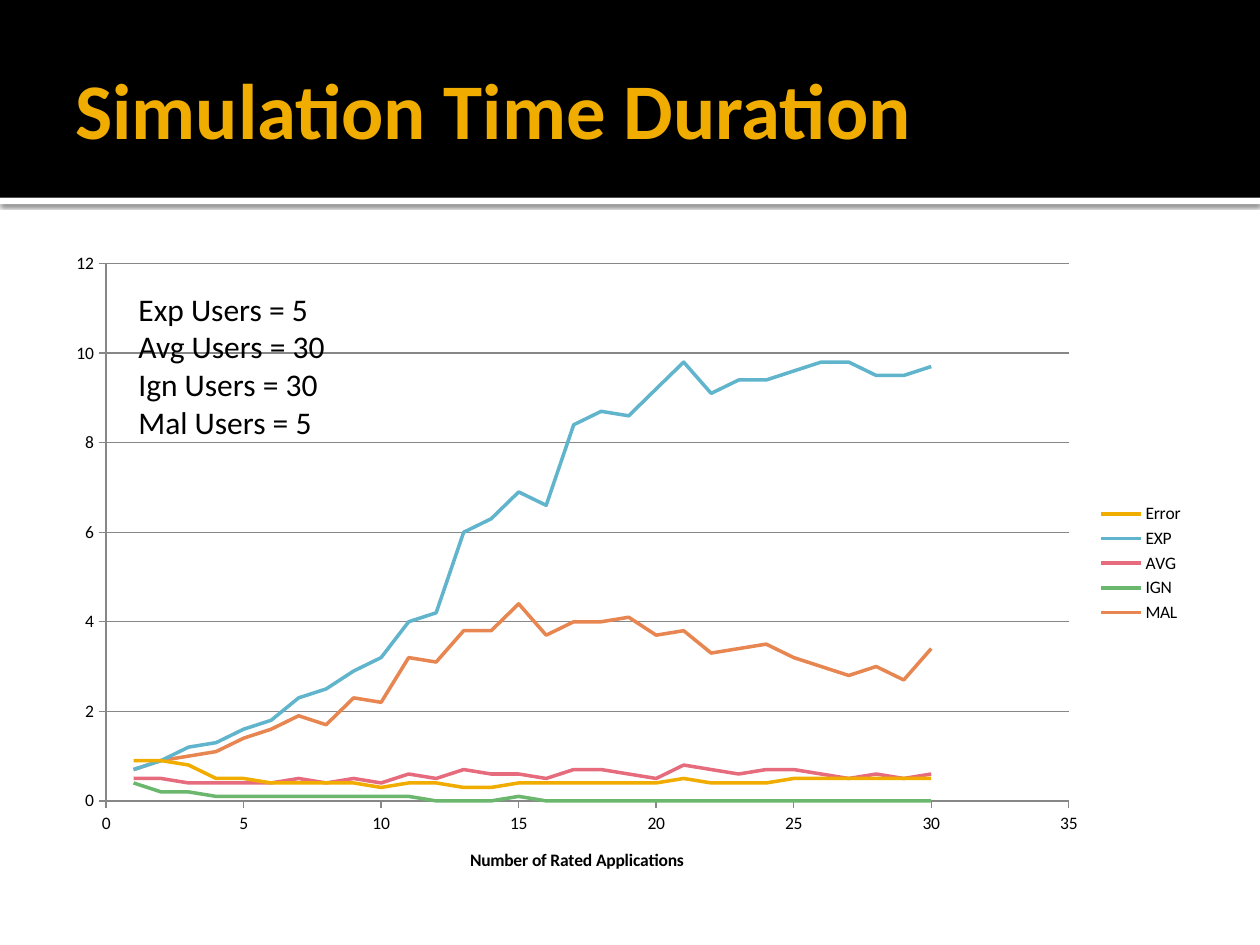
from dataclasses import dataclass

from lxml import etree
from pptx import Presentation
from pptx.chart.data import XyChartData
from pptx.dml.color import RGBColor
from pptx.enum.chart import XL_CHART_TYPE, XL_LEGEND_POSITION, XL_TICK_MARK
from pptx.enum.shapes import MSO_SHAPE
from pptx.enum.text import MSO_ANCHOR
from pptx.oxml import parse_xml
from pptx.oxml.ns import nsdecls, qn
from pptx.util import Inches, Pt

RECTANGLE = MSO_SHAPE.RECTANGLE
SCATTER_LINES = XL_CHART_TYPE.XY_SCATTER_LINES_NO_MARKERS
LEGEND_RIGHT = XL_LEGEND_POSITION.RIGHT
TICK_OUTSIDE = XL_TICK_MARK.OUTSIDE
TICK_NONE = XL_TICK_MARK.NONE
MIDDLE, TOP = MSO_ANCHOR.MIDDLE, MSO_ANCHOR.TOP

FONT = "Calibri"
BLACK, WHITE, GOLD, GRAY = "000000", "FFFFFF", "F0AD00", "878787"
PLOT_AREA = {"x": 0.038, "y": 0.03, "w": 0.849, "h": 0.843}


@dataclass
class Box:
    left: float
    top: float
    width: float
    height: float

    def lengths(self):
        return [Inches(v) for v in (self.left, self.top, self.width, self.height)]


@dataclass
class Series:
    name: str
    color: str
    values: list[float]


SERIES = [
    Series("Error", GOLD, [
        0.9, 0.9, 0.8, 0.5, 0.5, 0.4, 0.4, 0.4, 0.4, 0.3, 0.4, 0.4, 0.3, 0.3, 0.4,
        0.4, 0.4, 0.4, 0.4, 0.4, 0.5, 0.4, 0.4, 0.4, 0.5, 0.5, 0.5, 0.5, 0.5, 0.5]),
    Series("EXP", "60B5CC", [
        0.7, 0.9, 1.2, 1.3, 1.6, 1.8, 2.3, 2.5, 2.9, 3.2, 4, 4.2, 6, 6.3, 6.9,
        6.6, 8.4, 8.7, 8.6, 9.2, 9.8, 9.1, 9.4, 9.4, 9.6, 9.8, 9.8, 9.5, 9.5, 9.7]),
    Series("AVG", "E66C7D", [
        0.5, 0.5, 0.4, 0.4, 0.4, 0.4, 0.5, 0.4, 0.5, 0.4, 0.6, 0.5, 0.7, 0.6, 0.6,
        0.5, 0.7, 0.7, 0.6, 0.5, 0.8, 0.7, 0.6, 0.7, 0.7, 0.6, 0.5, 0.6, 0.5, 0.6]),
    Series("IGN", "6BB76D", [
        0.4, 0.2, 0.2, 0.1, 0.1, 0.1, 0.1, 0.1, 0.1, 0.1, 0.1, 0, 0, 0, 0.1,
        0, 0, 0, 0, 0, 0, 0, 0, 0, 0, 0, 0, 0, 0, 0]),
    Series("MAL", "E88651", [
        0.7, 0.9, 1, 1.1, 1.4, 1.6, 1.9, 1.7, 2.3, 2.2, 3.2, 3.1, 3.8, 3.8, 4.4,
        3.7, 4, 4, 4.1, 3.7, 3.8, 3.3, 3.4, 3.5, 3.2, 3, 2.8, 3, 2.7, 3.4]),
]


def rgb(color: str) -> RGBColor:
    return RGBColor.from_string(color)


def style_font(font, size: float, color: str = BLACK, bold: bool = False):
    font.name, font.size, font.bold = FONT, Pt(size), bold
    font.color.rgb = rgb(color)


def add_band(slide, box: Box, color: str):
    band = slide.shapes.add_shape(RECTANGLE, *box.lengths())
    band.fill.solid()
    band.fill.fore_color.rgb = rgb(color)
    band.line.fill.background()
    band.shadow.inherit = False
    return band


def add_drop_shadow(shape):
    effects = shape._element.spPr.find(qn("a:effectLst"))
    effects.append(parse_xml(
        f'<a:outerShdw {nsdecls("a")} blurRad="{Pt(2.5)}" dist="{Pt(0.8)}" '
        'dir="5400000" algn="tl" rotWithShape="0"><a:srgbClr val="000000">'
        '<a:alpha val="60000"/></a:srgbClr></a:outerShdw>'))


def write_text(shape, text: str, size: float, color: str, bold: bool, anchor):
    frame = shape.text_frame
    frame.word_wrap = True
    frame.vertical_anchor = anchor
    frame.text = text
    for paragraph in frame.paragraphs:
        for run in paragraph.runs:
            style_font(run.font, size, color, bold)


def add_text(slide, box: Box, text: str, size: float, color: str = BLACK,
             bold: bool = False, anchor=TOP):
    shape = slide.shapes.add_textbox(*box.lengths())
    write_text(shape, text, size, color, bold, anchor)
    return shape


def style_axis(axis, maximum: float, step: float):
    axis.minimum_scale, axis.maximum_scale, axis.major_unit = 0, maximum, step
    axis.major_tick_mark, axis.minor_tick_mark = TICK_OUTSIDE, TICK_NONE
    axis.format.line.color.rgb = rgb(GRAY)
    axis.format.line.width = Pt(0.75)
    axis.tick_labels.number_format = "General"
    axis.tick_labels.number_format_is_linked = False
    style_font(axis.tick_labels.font, 10)


def set_plot_layout(chart):
    """Fix the inner plot area as fractions of the chart."""
    plot_area = chart._chartSpace.chart.plotArea
    for old in plot_area.findall(qn("c:layout")):
        plot_area.remove(old)
    layout = etree.Element(qn("c:layout"))
    manual = etree.SubElement(layout, qn("c:manualLayout"))
    settings = {"layoutTarget": "inner", "xMode": "edge", "yMode": "edge", **PLOT_AREA}
    for tag, value in settings.items():
        etree.SubElement(manual, qn(f"c:{tag}")).set("val", str(value))
    plot_area.insert(0, layout)


def add_duration_chart(slide, box: Box):
    data = XyChartData()
    for series in SERIES:
        points = data.add_series(series.name)
        for count, value in enumerate(series.values, start=1):
            points.add_data_point(count, value)
    chart = slide.shapes.add_chart(SCATTER_LINES, *box.lengths(), data).chart
    style_font(chart.font, 10)
    chart.has_title = False
    chart.has_legend = True
    chart.legend.position = LEGEND_RIGHT
    chart.legend.include_in_layout = False
    style_font(chart.legend.font, 10)

    plot = chart.plots[0]
    plot.vary_by_categories = False
    for line, series in zip(plot.series, SERIES):
        line.smooth = False
        line.format.line.color.rgb = rgb(series.color)
        line.format.line.width = Pt(2)

    style_axis(chart.category_axis, 35, 5)
    style_axis(chart.value_axis, 12, 2)
    chart.category_axis.has_major_gridlines = False
    chart.value_axis.has_major_gridlines = True
    gridline = chart.value_axis.major_gridlines.format.line
    gridline.color.rgb = rgb(GRAY)
    gridline.width = Pt(0.75)
    title = chart.category_axis.axis_title.text_frame
    title.text = "Number of Rated Applications"
    style_font(title.paragraphs[0].runs[0].font, 10, bold=True)
    set_plot_layout(chart)


def main():
    presentation = Presentation()
    presentation.slide_width, presentation.slide_height = Inches(10), Inches(7.5)
    slide = presentation.slides.add_slide(presentation.slide_layouts[6])

    add_drop_shadow(add_band(slide, Box(0, 1.57, 10, 0.05), WHITE))
    add_band(slide, Box(0, 0, 10, 1.57), BLACK)
    title = add_text(slide, Box(0.5, 0.17, 9, 1.37), "Simulation Time Duration",
                     45, GOLD, True, MIDDLE)
    title.text_frame.margin_right = Inches(0.05)
    add_duration_chart(slide, Box(0.5, 1.94, 9, 5.06))
    user_counts = {"Exp": 5, "Avg": 30, "Ign": 30, "Mal": 5}
    add_text(slide, Box(1, 2.25, 1.92, 2),
             "\n".join(f"{kind} Users = {count}" for kind, count in user_counts.items()), 18)
    presentation.save("out.pptx")


if __name__ == "__main__":
    main()
